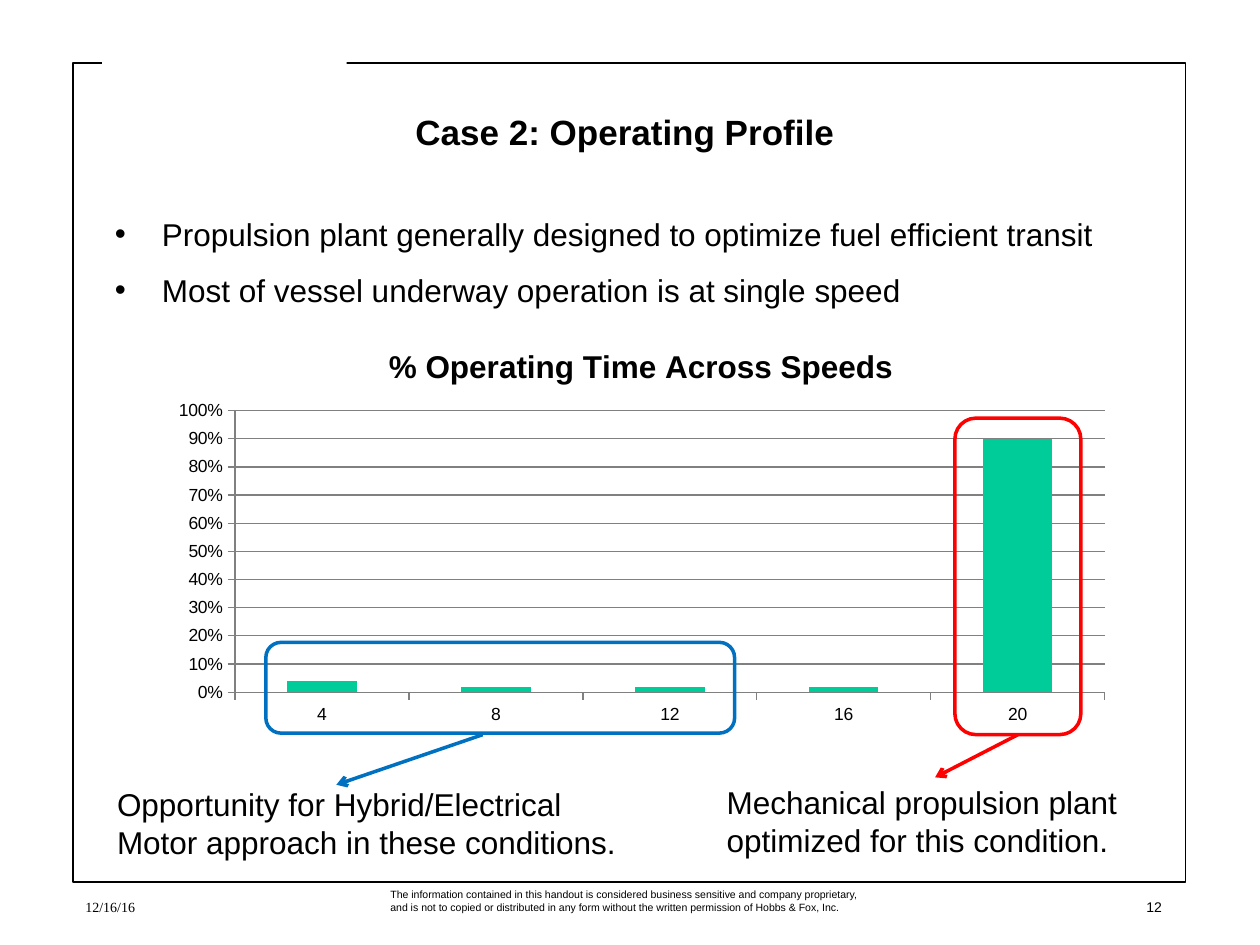
from lxml.etree import SubElement
from pptx import Presentation
from pptx.chart.data import CategoryChartData
from pptx.dml.color import RGBColor
from pptx.enum.chart import XL_CHART_TYPE, XL_TICK_MARK
from pptx.enum.shapes import MSO_CONNECTOR, MSO_SHAPE
from pptx.enum.text import MSO_ANCHOR, MSO_AUTO_SIZE, PP_ALIGN
from pptx.oxml import parse_xml
from pptx.oxml.ns import nsdecls, qn
from pptx.util import Cm, Pt

BLACK = RGBColor(0, 0, 0)
WHITE = RGBColor(255, 255, 255)
GREY = RGBColor(0x80, 0x80, 0x80)
GREEN = RGBColor(0x00, 0xCC, 0x99)
BLUE = RGBColor(0x00, 0x70, 0xC0)
RED = RGBColor(0xFF, 0x00, 0x00)


def write(para, text, size, face="Arial", bold=False):
    run = para.add_run()
    run.text = text
    run.font.size = Pt(size)
    run.font.name = face
    run.font.bold = bold
    run.font.color.rgb = BLACK


def draw(kind, spot, fill, line, width):
    shape = shapes.add_shape(kind, *map(Cm, spot))
    shape.shadow.inherit = False
    if fill is None:
        shape.fill.background()
    else:
        shape.fill.solid()
        shape.fill.fore_color.rgb = fill
    if line is None:
        shape.line.fill.background()
    else:
        shape.line.color.rgb = line
        shape.line.width = Pt(width)


deck = Presentation()
deck.slide_width = Cm(25.4)
deck.slide_height = Cm(19.05)
slide = deck.slides.add_slide(deck.slide_layouts[1])
shapes = slide.shapes
tree = shapes.title.element.getparent()

draw(MSO_SHAPE.RECTANGLE, (1.47, 1.27, 22.43, 16.51), WHITE, BLACK, 1)
draw(MSO_SHAPE.RECTANGLE, (2.06, 0.84, 4.93, 1.27), WHITE, None, 0)

body = slide.placeholders[1]
tree.append(body.element)
body.left, body.top, body.width, body.height = map(Cm, (2.06, 4.01, 21.59, 12.9))
frame = body.text_frame
frame.auto_size = MSO_AUTO_SIZE.NONE
points = [
    "Propulsion plant generally designed to optimize fuel efficient transit",
    "Most of vessel underway operation is at single speed",
]
for i, point in enumerate(points):
    para = frame.paragraphs[0] if i == 0 else frame.add_paragraph()
    props = para._p.get_or_add_pPr()
    props.set("marL", str(Cm(0.95)))
    props.set("indent", str(-Cm(0.95)))
    SubElement(props, qn("a:buChar")).set("char", "•")
    para.line_spacing = 1.25
    para.space_before = Pt(5 * i)
    write(para, point, 18)

head = "% Operating Time Across Speeds"
data = CategoryChartData(number_format="0%")
data.categories = ["4", "8", "12", "16", "20"]
data.add_series(head, (0.04, 0.02, 0.02, 0.02, 0.9))
spot = map(Cm, (3.18, 6.55, 19.48, 8.23))
chart = shapes.add_chart(XL_CHART_TYPE.COLUMN_CLUSTERED, *spot, data).chart
chart.font.size = Pt(10)
chart.font.name = "Arial"
chart.font.color.rgb = BLACK
chart.has_legend = False
chart.has_title = True
write(chart.chart_title.text_frame.paragraphs[0], head, 18, bold=True)
chart.chart_title.include_in_layout = False

plot = chart.plots[0]
plot.gap_width = 150
plot.vary_by_categories = False
bars = plot.series[0].format.fill
bars.solid()
bars.fore_color.rgb = GREEN

scale = chart.value_axis
scale.minimum_scale = 0
scale.maximum_scale = 1
scale.major_unit = 0.1
scale.tick_labels.number_format = "0%"
scale.tick_labels.number_format_is_linked = False
scale.has_major_gridlines = True
scale.major_gridlines.format.line.color.rgb = GREY
for axis in (scale, chart.category_axis):
    axis.major_tick_mark = XL_TICK_MARK.OUTSIDE
    axis.minor_tick_mark = XL_TICK_MARK.NONE
    axis.format.line.color.rgb = GREY

area = chart._chartSpace.chart.plotArea
for old in area.findall(qn("c:layout")):
    area.remove(old)
area.insert(0, parse_xml(
    f'<c:layout {nsdecls("c")}><c:manualLayout><c:layoutTarget val="inner"/>'
    '<c:xMode val="edge"/><c:yMode val="edge"/><c:x val="0.08"/><c:y val="0.21"/>'
    '<c:w val="0.9"/><c:h val="0.69"/></c:manualLayout></c:layout>'))

title = shapes.title
tree.append(title.element)
title.left, title.top, title.width, title.height = map(Cm, (1.9, 1.7, 21.59, 1.9))
title.text_frame.vertical_anchor = MSO_ANCHOR.MIDDLE
para = title.text_frame.paragraphs[0]
para.alignment = PP_ALIGN.CENTER
write(para, "Case 2: Operating Profile ", 20, bold=True)

arrows = [
    ((20.52, 14.81, 18.85, 15.67), RED),
    ((9.73, 14.81, 6.78, 15.82), BLUE),
]
for ends, color in arrows:
    arrow = shapes.add_connector(MSO_CONNECTOR.STRAIGHT, *map(Cm, ends))
    arrow.line.color.rgb = color
    arrow.line.width = Pt(2)
    SubElement(arrow.line._get_or_add_ln(), qn("a:tailEnd")).set("type", "arrow")
    SubElement(arrow._element.spPr, qn("a:effectLst"))

notice = (
    "The information contained in this handout is considered business sensitive "
    "and company proprietary, and is not to copied or distributed in any form "
    "without the written permission of Hobbs & Fox, Inc."
)
texts = [
    ((14.4, 15.67, 8.89, 1.8), "Mechanical propulsion plant optimized for this condition.", 18, "Arial", True),
    ((2.11, 15.7, 10.9, 1.8), "Opportunity for Hybrid/Electrical Motor approach in these conditions.", 18, "Arial", True),
    ((7.62, 17.78, 10.08, 0.76), notice, 6, "Arial", True),
    ((1.47, 17.98, 1.52, 0.61), "12/16/16", 8, "Times New Roman", False),
    ((22.86, 17.98, 0.86, 0.58), "12", 8, "Arial", False),
]
for spot, text, size, face, wrap in texts:
    frame = shapes.add_textbox(*map(Cm, spot)).text_frame
    frame.word_wrap = wrap
    frame.auto_size = MSO_AUTO_SIZE.SHAPE_TO_FIT_TEXT
    write(frame.paragraphs[0], text, size, face)

draw(MSO_SHAPE.ROUNDED_RECTANGLE, (5.36, 12.95, 9.45, 1.83), None, BLUE, 2)
draw(MSO_SHAPE.ROUNDED_RECTANGLE, (19.25, 8.43, 2.54, 6.38), None, RED, 2)

deck.save("out.pptx")
